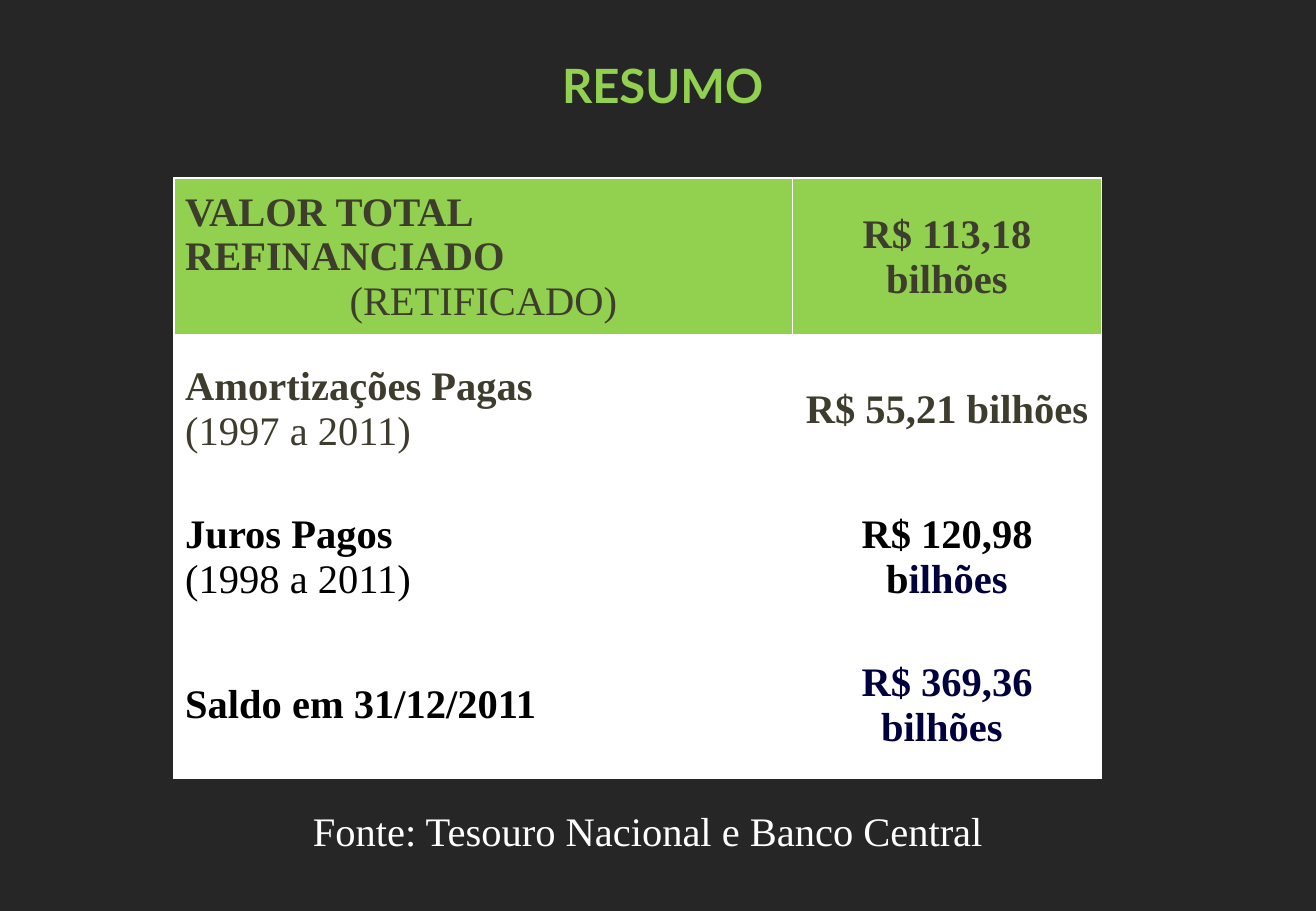
from lxml import etree
from pptx import Presentation
from pptx.dml.color import RGBColor
from pptx.enum.text import MSO_ANCHOR as Anchor, PP_ALIGN as Align
from pptx.oxml.ns import qn
from pptx.util import Pt

PX = 7620  # 120 px to the inch
SERIF, SANS = "Times New Roman", "Lato"

CHARCOAL = RGBColor(0x26, 0x26, 0x26)
GREEN = RGBColor(0x92, 0xD0, 0x50)
OLIVE = RGBColor(0x3E, 0x3D, 0x2D)
NAVY = RGBColor(0x00, 0x00, 0x3D)
BLACK = RGBColor(0x00, 0x00, 0x00)
WHITE = RGBColor(0xFF, 0xFF, 0xFF)

COLUMNS = [611, 305]
HEIGHTS = [155, 145, 147, 145]
# Each row: label, its colour, detail, detail alignment, value spans (text, colour)
ROWS = [
    ("VALOR TOTAL REFINANCIADO", OLIVE, "(RETIFICADO)", Align.CENTER,
     [("R$ 113,18 bilhões", OLIVE)]),
    ("Amortizações Pagas", OLIVE, "(1997 a 2011)", Align.LEFT,
     [("R$ 55,21 bilhões", OLIVE)]),
    ("Juros Pagos", BLACK, "(1998 a 2011)", Align.LEFT,
     [("R$ 120,98 b", BLACK), ("ilhões", NAVY)]),
    ("Saldo em 31/12/2011", BLACK, None, Align.LEFT,
     [("R$ 369,36 bilhões ", NAVY)]),
]


def add_span(para, text, color, size=24, font=SERIF, bold=False):
    span = para.add_run()
    span.text = text
    span.font.name = font
    span.font.size = Pt(size)
    span.font.bold = bold
    span.font.color.rgb = color


def add_centred_line(page, box, text, color, **style):
    frame = page.shapes.add_textbox(*(side * PX for side in box)).text_frame
    frame.word_wrap = True
    para = frame.paragraphs[0]
    para.alignment = Align.CENTER
    add_span(para, text, color, **style)


def set_borders(cell, bottom_width):
    """Draw white borders: 1 pt, with the bottom width given in points."""
    properties = cell._tc.get_or_add_tcPr()
    widths = {"a:lnL": 1, "a:lnR": 1, "a:lnT": 1, "a:lnB": bottom_width}
    for index, (tag, width) in enumerate(widths.items()):
        line = etree.Element(qn(tag), w=str(Pt(width)))
        fill = etree.SubElement(line, qn("a:solidFill"))
        etree.SubElement(fill, qn("a:srgbClr"), val=str(WHITE))
        properties.insert(index, line)


def style_cell(cell, is_header):
    cell.fill.solid()
    cell.fill.fore_color.rgb = GREEN if is_header else WHITE
    cell.vertical_anchor = Anchor.MIDDLE
    cell.margin_left = cell.margin_right = 11 * PX
    cell.margin_top = cell.margin_bottom = 6 * PX
    set_borders(cell, 3 if is_header else 1)


def add_debt_table(page, left, top):
    box = (left, top, sum(COLUMNS), sum(HEIGHTS))
    table = page.shapes.add_table(
        len(ROWS), len(COLUMNS), *(side * PX for side in box)).table
    table.first_row = table.horz_banding = False
    for column, width in zip(table.columns, COLUMNS):
        column.width = width * PX
    for index, (label, color, detail, align, value) in enumerate(ROWS):
        table.rows[index].height = HEIGHTS[index] * PX
        label_cell, value_cell = table.cell(index, 0), table.cell(index, 1)
        for cell in (label_cell, value_cell):
            style_cell(cell, index == 0)
        add_span(label_cell.text_frame.paragraphs[0], label, color, bold=True)
        if detail:
            para = label_cell.text_frame.add_paragraph()
            para.alignment = align
            add_span(para, detail, color)
        para = value_cell.text_frame.paragraphs[0]
        para.alignment = Align.CENTER
        for text, span_color in value:
            add_span(para, text, span_color, bold=True)


def build_summary(deck):
    page = deck.slides.add_slide(deck.slide_layouts[6])
    page.background.fill.solid()
    page.background.fill.fore_color.rgb = CHARCOAL
    add_centred_line(page, (73, 50, 1163, 68), "RESUMO", GREEN,
                     size=28, font=SANS, bold=True)
    add_debt_table(page, 172, 176)
    add_centred_line(page, (234, 790, 812, 60),
                     "Fonte: Tesouro Nacional e Banco Central", WHITE)


def main():
    deck = Presentation()
    deck.slide_width, deck.slide_height = 1300 * PX, 900 * PX
    build_summary(deck)
    deck.save("out.pptx")


if __name__ == "__main__":
    main()
